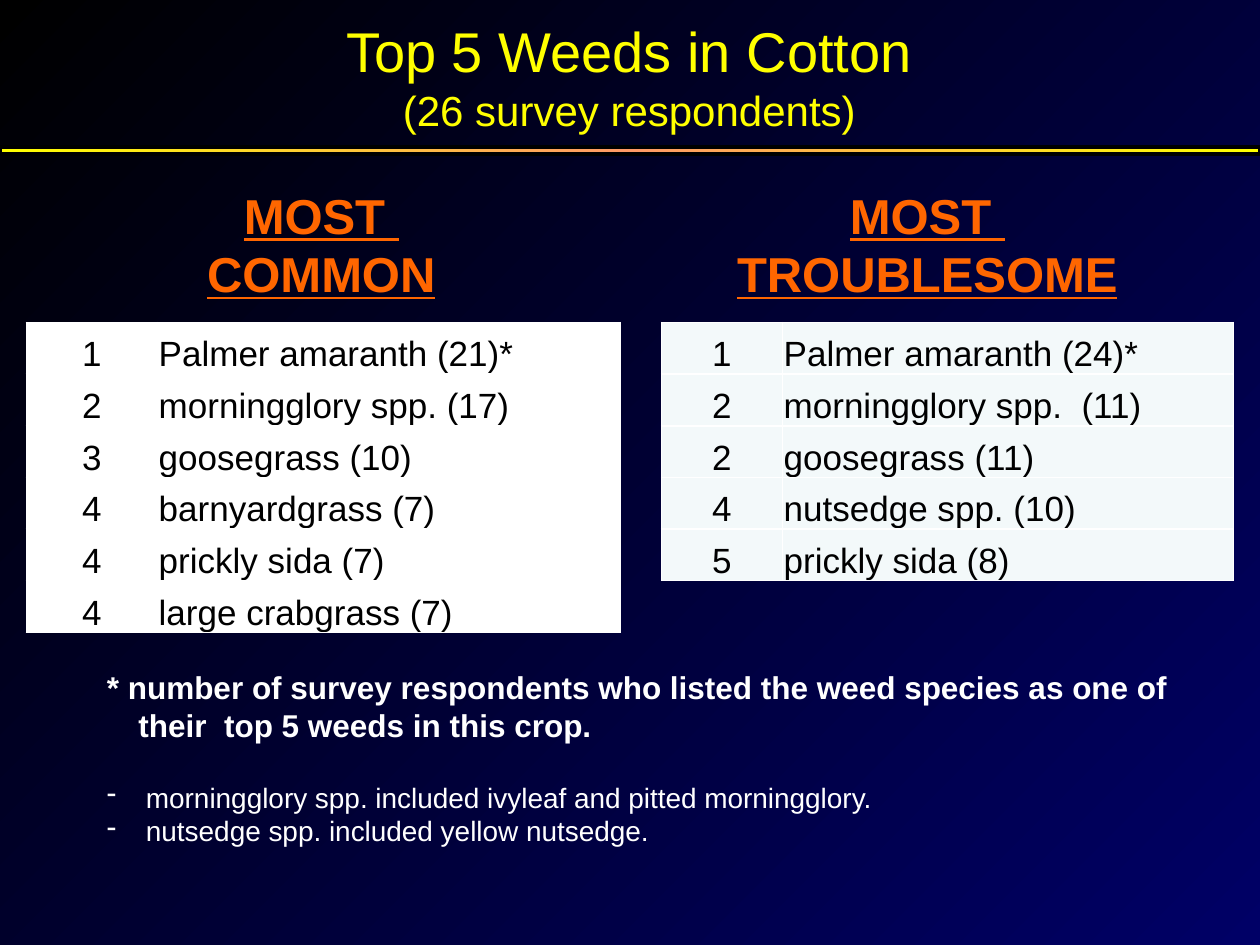
from copy import deepcopy
from lxml.etree import SubElement
from pptx import Presentation
from pptx.dml.color import RGBColor
from pptx.enum.shapes import MSO_SHAPE
from pptx.enum.text import MSO_ANCHOR, MSO_AUTO_SIZE, PP_ALIGN
from pptx.oxml.ns import qn
from pptx.util import Inches, Pt

# Content
TITLE = [("Top 5 Weeds in Cotton", "title"), ("(26 survey respondents)", "sub")]
HEADS = [  # lines, box, wrap
    (("MOST ", "COMMON"), (1.35, 1.42, 2.4, 1.04), True),
    (("MOST ", "TROUBLESOME"), (5.73, 1.42, 3.26, 1.04), False),
]
TABLES = [  # left, column widths, fill, rows
    (0.21, (1.04, 3.67), "common", [
        ("1", "Palmer amaranth (21)*"),
        ("2", "morningglory spp. (17)"),
        ("3", "goosegrass (10)"),
        ("4", "barnyardgrass (7)"),
        ("4", "prickly sida (7)"),
        ("4", "large crabgrass (7)"),
    ]),
    (5.25, (0.96, 3.58), "trouble", [
        ("1", "Palmer amaranth (24)*"),
        ("2", "morningglory spp.  (11)"),
        ("2", "goosegrass (11)"),
        ("4", "nutsedge spp. (10)"),
        ("5", "prickly sida (8)"),
    ]),
]
NOTES = [  # text, style, indent, bullet, space before
    ("* number of survey respondents who listed the weed species as one of "
     "their  top 5 weeds in this crop.", "note", 0.25, None, 0),
    ("morningglory spp. included ivyleaf and pitted morningglory.",
     "item", 0.31, "-", 21),
    ("nutsedge spp. included yellow nutsedge.", "item", 0.31, "-", 0),
]

# Theme: colours, and size, colour, bold, underline for each text style
THEME = {
    "font": "Arial",
    "back": [(0, "000000"), (1, "000066")],
    "rule": [(0, "FFFF00"), (0.5, "FF9966"), (1, "FFFF00")],
    "edge": "000000", "grid": "FFFFFF",
    "common": "FFFFFF", "trouble": "F3F9FA",
    "text": {
        "title": (32, "FFFF00", False, False),
        "sub": (24, "FFFF00", False, False),
        "head": (28, "FF6600", True, True),
        "cell": (20, "000000", False, False),
        "note": (18, "FFFFFF", True, False),
        "item": (16, "FFFFFF", False, False),
    },
}
ROW, TOP = 0.41, 2.56


def rgb(code):
    return RGBColor.from_string(code)


def write(para, text, style, align=PP_ALIGN.LEFT):
    size, color, bold, line = THEME["text"][style]
    run = para.add_run()
    run.text = text
    para.alignment = align
    look = {"name": THEME["font"], "size": Pt(size), "bold": bold, "underline": line}
    for key, value in look.items():
        setattr(run.font, key, value)
    run.font.color.rgb = rgb(color)


def add_text(slide, box, **props):
    frame = slide.shapes.add_textbox(*map(Inches, box)).text_frame
    for key, value in {"word_wrap": True, **props}.items():
        setattr(frame, key, value)
    return frame


def next_para(frame, i):
    return frame.add_paragraph() if i else frame.paragraphs[0]


def blend(fill, root, stops, angle):
    fill.gradient()
    fill.gradient_angle = angle
    items = root.find(".//" + qn("a:gsLst"))
    for _ in stops[2:]:
        items.append(deepcopy(items[0]))
    for stop, (place, color) in zip(fill.gradient_stops, stops):
        stop.position = place
        stop.color.rgb = rgb(color)


def edge_cell(cell):
    props = cell._tc.get_or_add_tcPr()
    for i, side in enumerate(("lnL", "lnR", "lnT", "lnB")):
        line = props.makeelement(qn("a:" + side), {"w": str(Pt(1))})
        props.insert(i, line)
        solid = SubElement(line, qn("a:solidFill"))
        SubElement(solid, qn("a:srgbClr"), val=THEME["grid"])


def add_table(slide, left, widths, fill, rows):
    table = slide.shapes.add_table(
        len(rows), len(widths), Inches(left), Inches(TOP),
        Inches(sum(widths)), Inches(ROW * len(rows))).table
    for flag in ("first_row", "horz_banding"):
        setattr(table, flag, False)
    for col, width in zip(table.columns, widths):
        col.width = Inches(width)
    inset = {"margin_left": 0.01, "margin_right": 0.01,
             "margin_top": 0.01, "margin_bottom": 0}
    for r, row in enumerate(rows):
        for c, text in enumerate(row):
            cell = table.cell(r, c)
            for key, value in inset.items():
                setattr(cell, key, Inches(value))
            cell.vertical_anchor = MSO_ANCHOR.BOTTOM
            cell.fill.solid()
            cell.fill.fore_color.rgb = rgb(THEME[fill])
            edge_cell(cell)
            align = PP_ALIGN.LEFT if c else PP_ALIGN.CENTER
            write(cell.text_frame.paragraphs[0], text, "cell", align)


def main():
    deck = Presentation()
    deck.slide_width, deck.slide_height = Inches(10), Inches(7.5)
    slide = deck.slides.add_slide(deck.slide_layouts[6])
    blend(slide.background.fill, slide._element, THEME["back"], 315)

    # Title and rule below it
    frame = add_text(slide, (0.33, 0, 9.33, 1.2), vertical_anchor=MSO_ANCHOR.MIDDLE)
    for i, (text, style) in enumerate(TITLE):
        write(next_para(frame, i), text, style, PP_ALIGN.CENTER)
    rule = slide.shapes.add_shape(
        MSO_SHAPE.RECTANGLE, *map(Inches, (0, 1.17, 10, 0.05)))
    rule.shadow.inherit = False
    blend(rule.fill, rule._element, THEME["rule"], 0)
    rule.line.color.rgb = rgb(THEME["edge"])
    rule.line.width = Pt(2.25)

    # Column headings and tables
    for lines, box, wrap in HEADS:
        frame = add_text(slide, box, word_wrap=wrap,
                         auto_size=MSO_AUTO_SIZE.SHAPE_TO_FIT_TEXT)
        for i, text in enumerate(lines):
            write(next_para(frame, i), text, "head", PP_ALIGN.CENTER)
    for spec_row in TABLES:
        add_table(slide, *spec_row)

    # Footnotes
    frame = add_text(slide, (0.75, 5.25, 8.71, 1.55),
                     auto_size=MSO_AUTO_SIZE.SHAPE_TO_FIT_TEXT)
    for i, (text, style, indent, mark, gap) in enumerate(NOTES):
        para = next_para(frame, i)
        write(para, text, style)
        para.space_before = Pt(gap)
        props = para._p.get_or_add_pPr()
        props.set("marL", str(Inches(indent)))
        props.set("indent", str(-Inches(indent)))
        if mark:
            SubElement(props, qn("a:buChar"), char=mark)

    deck.save("out.pptx")


if __name__ == "__main__":
    main()
